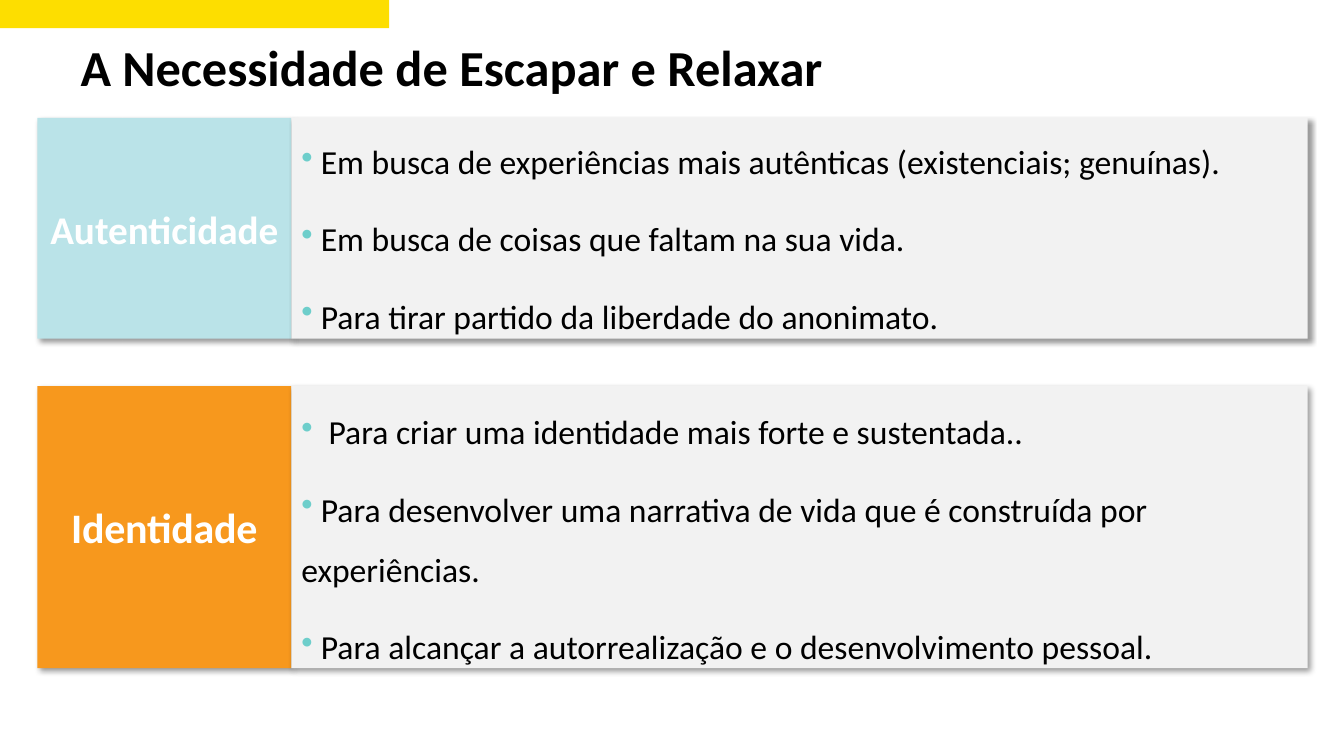
from dataclasses import dataclass

from lxml import etree
from pptx import Presentation
from pptx.dml.color import RGBColor
from pptx.enum.shapes import MSO_SHAPE
from pptx.enum.text import MSO_ANCHOR, MSO_AUTO_SIZE, PP_ALIGN
from pptx.oxml.ns import qn
from pptx.shapes.autoshape import Shape
from pptx.slide import Slide
from pptx.text.text import _Paragraph
from pptx.util import Pt

RECTANGLE = MSO_SHAPE.RECTANGLE
LEFT, CENTER = PP_ALIGN.LEFT, PP_ALIGN.CENTER
TOP, MIDDLE = MSO_ANCHOR.TOP, MSO_ANCHOR.MIDDLE
GROW = MSO_AUTO_SIZE.SHAPE_TO_FIT_TEXT
EMU_PER_PX = 9144  # 100 px to the inch


@dataclass(frozen=True)
class Theme:
    font: str = "Calibri"
    black: str = "000000"
    white: str = "FFFFFF"
    accent: str = "FDDE00"
    panel: str = "F2F2F2"
    bullet: str = "6ECECB"
    aqua: str = "BAE3E8"
    orange: str = "F7981D"
    title_size: int = 36
    body_size: int = 24


@dataclass(frozen=True)
class Reason:
    text: str
    hanging: int = 0


@dataclass(frozen=True)
class Topic:
    label: str
    color: str
    label_size: int
    tracking: int  # hundredths of a point
    top: int
    height: int
    anchor: MSO_ANCHOR
    reasons: tuple[Reason, ...]


THEME = Theme()
LABEL_LEFT, LABEL_WIDTH, PANEL_WIDTH = 37, 252, 1008

TOPICS = (
    Topic("Autenticidade", THEME.aqua, 28, 0, 117, 219, MIDDLE, (
        Reason(" Em busca de experiências mais autênticas (existenciais; genuínas)."),
        Reason(" Em busca de coisas que faltam na sua vida."),
        Reason(" Para tirar partido da liberdade do anonimato."),
    )),
    Topic("Identidade", THEME.orange, 30, -20, 383, 280, TOP, (
        Reason("Para criar uma identidade mais forte e sustentada..", hanging=27),
        Reason(" Para desenvolver uma narrativa de vida que é construída por experiências."),
        Reason(" Para alcançar a autorrealização e o desenvolvimento pessoal."),
    )),
)


def px(value: int) -> int:
    return value * EMU_PER_PX


def style(paragraph: _Paragraph, size: int, color: str, bold: bool = False) -> None:
    for run in paragraph.runs:
        run.font.name = THEME.font
        run.font.size = Pt(size)
        run.font.bold = bold
        run.font.color.rgb = RGBColor.from_string(color)


def add_block(slide: Slide, left: int, top: int, width: int, height: int, fill: str) -> Shape:
    block = slide.shapes.add_shape(RECTANGLE, px(left), px(top), px(width), px(height))
    block.fill.solid()
    block.fill.fore_color.rgb = RGBColor.from_string(fill)
    block.line.fill.background()
    block.shadow.inherit = False
    return block


def add_shadow(block: Shape) -> None:
    effects = block._element.spPr.find(qn("a:effectLst"))
    shadow = etree.SubElement(effects, qn("a:outerShdw"), blurRad=str(Pt(4)),
                              dist=str(Pt(3)), dir="2700000", algn="tl", rotWithShape="0")
    color = etree.SubElement(shadow, qn("a:srgbClr"), val=THEME.black)
    etree.SubElement(color, qn("a:alpha"), val="40000")


def add_bullet(paragraph: _Paragraph, hanging: int) -> None:
    properties = paragraph._p.get_or_add_pPr()
    properties.set("marL", str(px(hanging)))
    properties.set("indent", str(-px(hanging)))
    color = etree.SubElement(properties, qn("a:buClr"))
    etree.SubElement(color, qn("a:srgbClr"), val=THEME.bullet)
    etree.SubElement(properties, qn("a:buChar"), char="•")


def add_label(slide: Slide, topic: Topic) -> None:
    label = add_block(slide, LABEL_LEFT, topic.top, LABEL_WIDTH, topic.height, topic.color)
    add_shadow(label)
    frame = label.text_frame
    frame.text = topic.label
    frame.word_wrap = True
    frame.vertical_anchor = MIDDLE
    paragraph = frame.paragraphs[0]
    paragraph.alignment = CENTER
    style(paragraph, topic.label_size, THEME.white, bold=True)
    if topic.tracking:
        paragraph.runs[0]._r.get_or_add_rPr().set("spc", str(topic.tracking))


def add_panel(slide: Slide, topic: Topic) -> None:
    panel = add_block(slide, LABEL_LEFT + LABEL_WIDTH, topic.top, PANEL_WIDTH,
                      topic.height, THEME.panel)
    add_shadow(panel)
    frame = panel.text_frame
    frame.text = "\n".join(reason.text for reason in topic.reasons)
    frame.word_wrap = True
    frame.auto_size = GROW
    frame.vertical_anchor = topic.anchor
    for paragraph, reason in zip(frame.paragraphs, topic.reasons):
        add_bullet(paragraph, reason.hanging)
        paragraph.alignment = LEFT
        paragraph.line_spacing = 1.5
        paragraph.space_after = Pt(12)
        style(paragraph, THEME.body_size, THEME.black)


def add_title(slide: Slide, text: str) -> None:
    title = slide.shapes.add_textbox(px(70), px(38), px(912), px(76))
    title.text_frame.text = text
    title.text_frame.word_wrap = True
    paragraph = title.text_frame.paragraphs[0]
    paragraph.line_spacing = 0.9
    style(paragraph, THEME.title_size, THEME.black, bold=True)


def main() -> None:
    presentation = Presentation()
    presentation.slide_width, presentation.slide_height = px(1333), px(750)
    slide = presentation.slides.add_slide(presentation.slide_layouts[6])

    # Header
    add_block(slide, 0, 0, 386, 28, THEME.accent)
    add_title(slide, "A Necessidade de Escapar e Relaxar")

    # Labels, then the panels that overlap their shadows
    for topic in TOPICS:
        add_label(slide, topic)
    for topic in reversed(TOPICS):
        add_panel(slide, topic)

    presentation.save("out.pptx")


if __name__ == "__main__":
    main()
